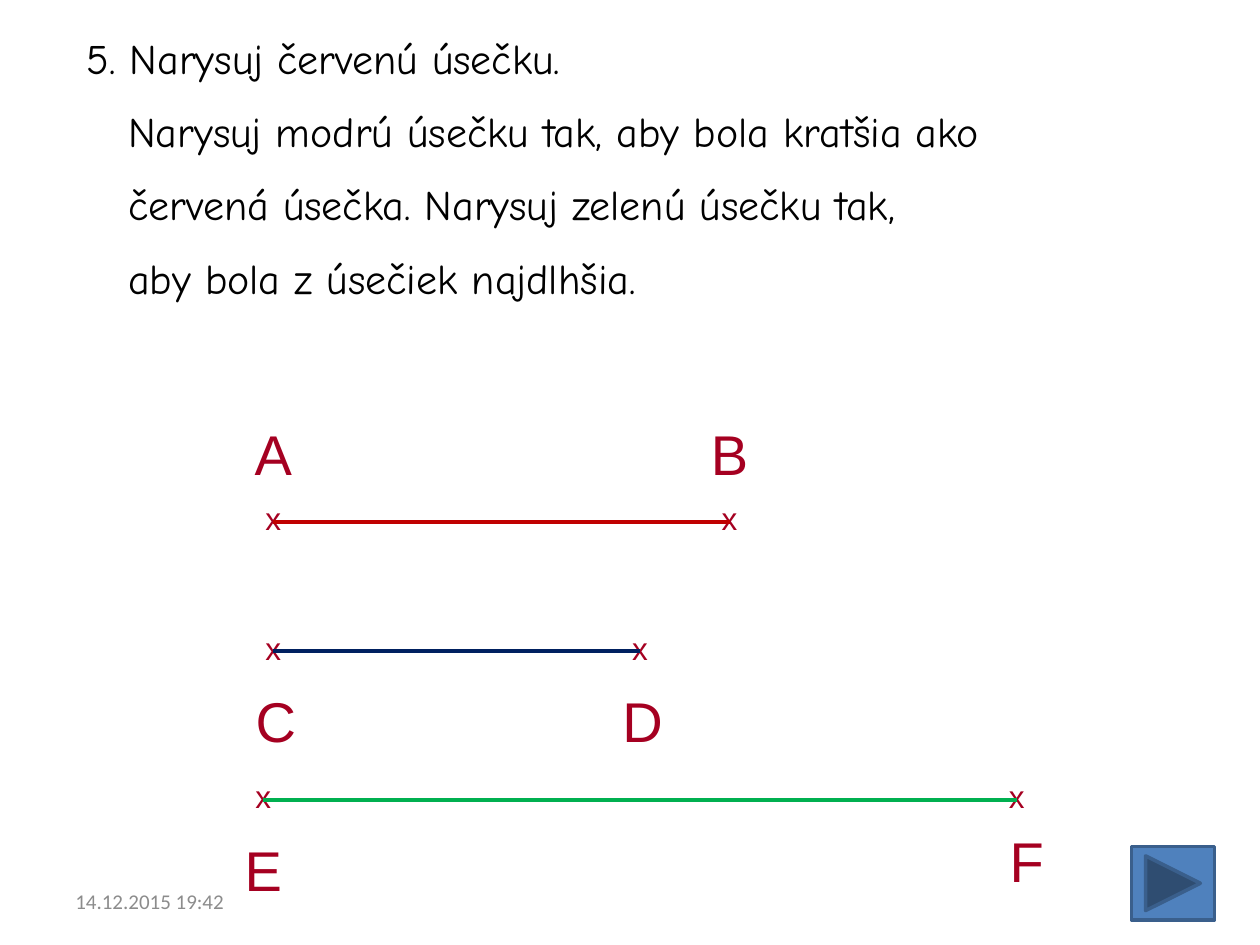
from pptx import Presentation
from pptx.dml.color import RGBColor
from pptx.enum.shapes import MSO_CONNECTOR as Connector, MSO_SHAPE as Shape
from pptx.enum.text import MSO_ANCHOR as Anchor, PP_ALIGN as Align
from pptx.oxml.ns import qn
from pptx.util import Inches, Pt
from lxml import etree

COLORS = {
    "text": "000000", "point": "A50021", "date": "8C8C8C",
    "red": "C00000", "blue": "002060", "green": "00B050",
    "button": "4F81BD", "button_line": "3A5F8C",
}
TASK = [
    "5. Narysuj červenú úsečku.",
    "Narysuj modrú úsečku tak, aby bola kratšia ako",
    "červená úsečka. Narysuj zelenú úsečku tak,",
    "aby bola z úsečiek najdlhšia.",
]
# colour, height of the line, then for each end: name, x, label shift (x, y)
SEGMENTS = [
    ("red", 4.14, [("A", 2.17, 0, -0.86), ("B", 5.79, 0, -0.86)]),
    ("blue", 5.17, [("C", 2.17, 0.02, 0.23), ("D", 5.08, 0.02, 0.23)]),
    ("green", 6.35, [("E", 2.09, 0, 0.23), ("F", 8.07, 0.08, 0.16)]),
]


def rgb(name):
    return RGBColor.from_string(COLORS[name])


def add_text(slide, box, lines, font, paragraph_format=None, anchor=Anchor.TOP):
    """Add a wrapped text box with one paragraph per line."""
    frame = slide.shapes.add_textbox(*map(Inches, box)).text_frame
    frame.word_wrap = True
    frame.vertical_anchor = anchor
    frame.text = "\n".join(lines)
    name, size, color = font
    for paragraph in frame.paragraphs:
        for key, value in (paragraph_format or {}).items():
            setattr(paragraph, key, value)
        text_font = paragraph.runs[0].font
        for key, value in {"name": name, "size": Pt(size)}.items():
            setattr(text_font, key, value)
        text_font.color.rgb = rgb(color)
    return frame


def add_task(slide, box):
    frame = add_text(slide, box, TASK, ("Comic Neue", 24, "text"),
                     {"space_before": Pt(13)})
    for paragraph in frame.paragraphs[1:]:
        properties = paragraph._p.get_or_add_pPr()
        properties.set("marL", str(Inches(0.33)))
        properties.set("indent", "0")


def add_segment(slide, color, y, ends):
    """Add a line with a cross and a letter at each end."""
    for name, x, shift_x, shift_y in ends:
        add_text(slide, (x - 0.2, y - 0.23, 0.4, 0.4), ["x"],
                 ("Arial", 18, "point"), {"alignment": Align.CENTER})
        add_text(slide, (x + shift_x - 0.3, y + shift_y, 0.6, 0.64), [name],
                 ("Arial", 32, "point"), {"alignment": Align.CENTER})
    start, end = (Inches(x) for _, x, _, _ in ends)
    line = slide.shapes.add_connector(Connector.STRAIGHT, start, Inches(y), end, Inches(y))
    line.line.color.rgb = rgb(color)
    line.line.width = Pt(2.25)
    etree.SubElement(line._element.spPr, qn("a:effectLst"))


def add_next_button(slide, box):
    button = slide.shapes.add_shape(Shape.ACTION_BUTTON_FORWARD_OR_NEXT, *map(Inches, box))
    button.shadow.inherit = False
    button.fill.solid()
    button.fill.fore_color.rgb = rgb("button")
    button.line.color.rgb = rgb("button_line")
    button.line.width = Pt(2)


def main():
    presentation = Presentation()
    presentation.slide_width, presentation.slide_height = Inches(10), Inches(7.5)
    slide = presentation.slides.add_slide(presentation.slide_layouts[6])
    add_task(slide, (0.59, 0.21, 8.51, 2.32))
    for segment in SEGMENTS:
        add_segment(slide, *segment)
    add_next_button(slide, (8.98, 6.72, 0.66, 0.58))
    add_text(slide, (0.5, 6.95, 2.33, 0.4), ["14.12.2015 19:42"],
             ("Calibri", 12, "date"), anchor=Anchor.MIDDLE)
    presentation.save("out.pptx")


if __name__ == "__main__":
    main()
